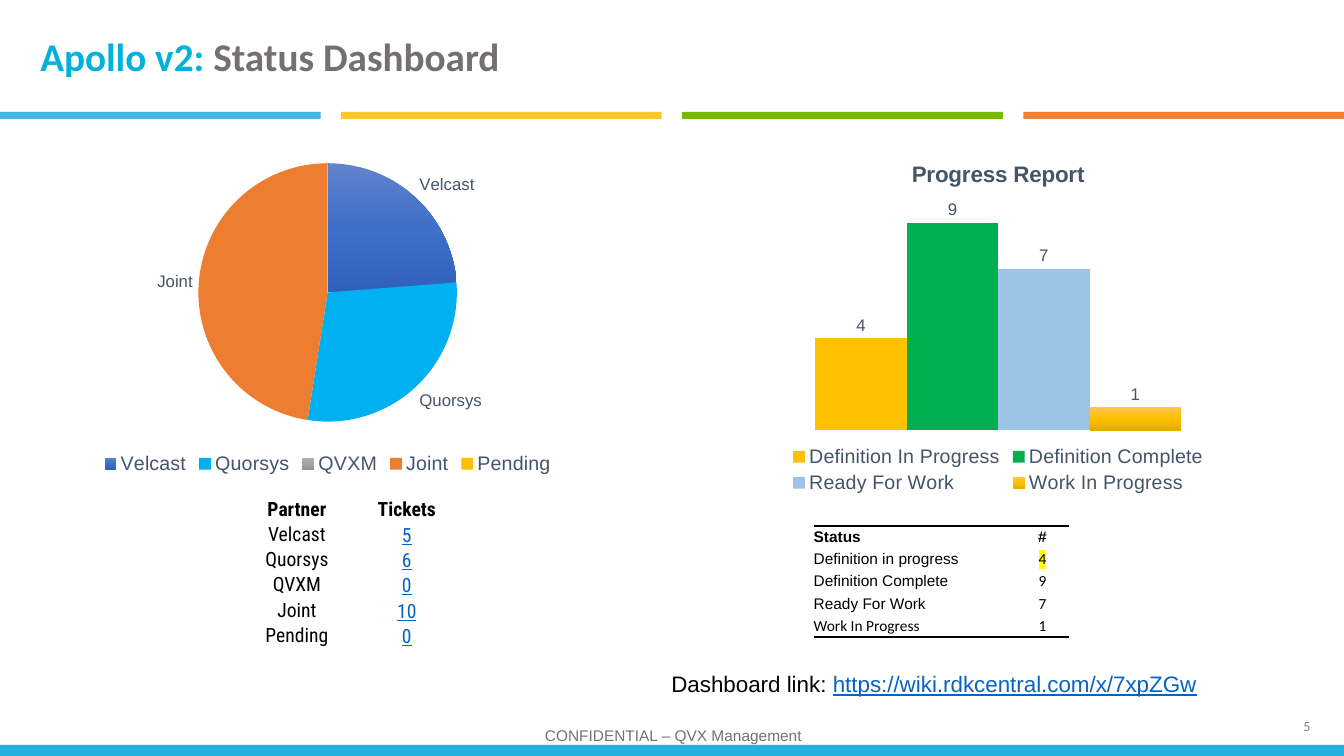
from copy import deepcopy

from lxml.etree import SubElement
from pptx import Presentation
from pptx.chart.data import CategoryChartData
from pptx.dml.color import RGBColor
from pptx.enum.chart import XL_CHART_TYPE as ChartType
from pptx.enum.chart import XL_LABEL_POSITION as LabelPosition
from pptx.enum.chart import XL_LEGEND_POSITION as LegendPosition
from pptx.enum.shapes import MSO_SHAPE as Shape
from pptx.enum.text import MSO_ANCHOR as Anchor
from pptx.enum.text import MSO_AUTO_SIZE as AutoSize
from pptx.enum.text import PP_ALIGN as Align
from pptx.oxml import parse_xml
from pptx.oxml.ns import nsdecls, qn
from pptx.util import Inches, Pt

SLIDE_W, SLIDE_H = 13.33, 7.5
STRIPE_W = 3.18
NO_STYLE = "{2D5ABB26-0587-4C30-8999-92F81FD0307C}"
COLORS = {
    "black": "000000", "white": "FFFFFF", "title": "00B2DB", "title_gray": "757070",
    "footer": "767171", "number": "808080", "bar": "22B2DB", "link": "0563C1",
    "highlight": "FFFF00", "chart_text": "44546A", "sky": "00B0F0",
    "orange": "ED7D31", "amber": "FFC000", "green": "00B050", "pale": "9DC3E6",
}
STRIPES = ["42B4E6", "FFC726", "76B900", "F27E32"]
BLUE_FADE = ["6183CB", "3E70CA", "3062BB"]
GRAY_FADE = ["AFAFAF", "A5A5A5", "939393"]
AMBER_FADE = ["FFC64B", "FFC000", "E3AB00"]

# Partner, tickets, share of the pie, slice fill
PARTNERS = [
    ("Velcast", 5, 24, BLUE_FADE),
    ("Quorsys", 6, 29, COLORS["sky"]),
    ("QVXM", 0, 0, GRAY_FADE),
    ("Joint", 10, 48, COLORS["orange"]),
    ("Pending", 0, 0, COLORS["amber"]),
]
# Table label, legend label, count, label font, column fill
STATUSES = [
    ("Definition in progress", "Definition In Progress", 4, "Arial", COLORS["amber"]),
    ("Definition Complete", "Definition Complete", 9, "Arial", COLORS["green"]),
    ("Ready For Work", "Ready For Work", 7, "Arial", COLORS["pale"]),
    ("Work In Progress", "Work In Progress", 1, "Calibri", AMBER_FADE),
]


def set_font(font, size, color, name="Arial", bold=False):
    font.size, font.name, font.bold = Pt(size), name, bold
    font.color.rgb = RGBColor.from_string(COLORS[color])


def add_span(para, text, size, color="black", name="Arial", bold=False,
             underline=False, highlight=None):
    span = para.add_run()
    span.text = text
    set_font(span.font, size, color, name, bold)
    if underline:
        span.font.underline = True
    if highlight:
        mark = parse_xml(f'<a:highlight {nsdecls("a")}>'
                         f'<a:srgbClr val="{COLORS[highlight]}"/></a:highlight>')
        span._r.rPr.find(qn("a:solidFill")).addnext(mark)


def add_box(page, left, top, width, height, wrap=False, anchor=Anchor.TOP):
    """Add a text box and return its first paragraph."""
    frame = page.shapes.add_textbox(
        Inches(left), Inches(top), Inches(width), Inches(height)).text_frame
    frame.word_wrap, frame.vertical_anchor = wrap, anchor
    return frame.paragraphs[0]


def add_bar(page, left, top, width, height, color):
    bar = page.shapes.add_shape(
        Shape.RECTANGLE, Inches(left), Inches(top), Inches(width), Inches(height))
    bar.shadow.inherit = False
    bar.fill.solid()
    bar.fill.fore_color.rgb = RGBColor.from_string(color)
    bar.line.fill.background()


def add_table(page, left, top, widths, row_height, row_count):
    frame = page.shapes.add_table(
        row_count, len(widths), Inches(left), Inches(top),
        Inches(sum(widths)), Inches(row_height * row_count))
    table = frame.table
    table.first_row = table.horz_banding = False
    table._tbl.tblPr.find(qn("a:tableStyleId")).text = NO_STYLE
    for column, width in zip(table.columns, widths):
        column.width = Inches(width)
    for row in table.rows:
        row.height = Inches(row_height)
    return table


def fill_cell(cell, text, inset=0, anchor=Anchor.MIDDLE, align=Align.CENTER, **style):
    cell.margin_left = cell.margin_right = cell.margin_top = Inches(inset)
    cell.margin_bottom = 0
    cell.vertical_anchor = anchor
    para = cell.text_frame.paragraphs[0]
    para.alignment = align
    add_span(para, text, **style)


def add_rule(cell, side):
    """Draw a black 2 pt border; side is T or B."""
    cell._tc.get_or_add_tcPr().insert(0, parse_xml(
        f'<a:ln{side} {nsdecls("a")} w="{Pt(2)}"><a:solidFill>'
        f'<a:srgbClr val="{COLORS["black"]}"/></a:solidFill></a:ln{side}>'))


def paint(fill, color):
    """Fill with one colour, or with a downward fade through three."""
    if isinstance(color, str):
        fill.solid()
        fill.fore_color.rgb = RGBColor.from_string(color)
        return
    fill.gradient()
    fill.gradient_angle = 270
    first = fill.gradient_stops[0]._gs
    first.addnext(deepcopy(first))
    for stop, shade, position in zip(fill.gradient_stops, color, (0, 0.5, 1)):
        stop.color.rgb = RGBColor.from_string(shade)
        stop.position = position


def add_chart(page, kind, data, left, top, width, height, plot_box):
    chart = page.shapes.add_chart(
        kind, Inches(left), Inches(top), Inches(width), Inches(height), data).chart
    set_font(chart.font, 10, "black")
    chart.has_title = False
    chart.has_legend = True
    chart.legend.position = LegendPosition.BOTTOM
    chart.legend.include_in_layout = False
    set_font(chart.legend.font, 14, "chart_text")
    area = chart._chartSpace.chart.plotArea
    for old in area.findall(qn("c:layout")):
        area.remove(old)
    layout = parse_xml(f'<c:layout {nsdecls("c")}><c:manualLayout/></c:layout>')
    settings = [("layoutTarget", "inner"), ("xMode", "edge"), ("yMode", "edge"),
                *zip("xywh", plot_box)]
    for tag, value in settings:
        SubElement(layout[0], qn(f"c:{tag}")).set("val", str(value))
    area.insert(0, layout)
    return chart


def add_partner_pie(page):
    data = CategoryChartData()
    data.categories = [name for name, *_ in PARTNERS]
    data.add_series("Series 1", [share for _, _, share, _ in PARTNERS])
    chart = add_chart(page, ChartType.PIE, data, 0.3, 1.42, 5.9, 3.33,
                      (0.28, 0.06, 0.44, 0.77))
    chart.plots[0].vary_by_categories = True
    series = chart.plots[0].series[0]
    labels = series.data_labels
    labels.show_category_name, labels.show_value = True, False
    labels.show_percentage = False
    labels.position = LabelPosition.OUTSIDE_END
    set_font(labels.font, 12, "chart_text")
    hidden = []
    for index, (_, _, share, color) in enumerate(PARTNERS):
        paint(series.points[index].format.fill, color)
        if not share:
            hidden.append(parse_xml(f'<c:dLbl {nsdecls("c")}><c:idx val="{index}"/>'
                                    '<c:delete val="1"/></c:dLbl>'))
    labels._element[0:0] = hidden


def add_progress_columns(page):
    data = CategoryChartData()
    data.categories = ["1"]
    for _, name, count, _, _ in STATUSES:
        data.add_series(name, [count])
    chart = add_chart(page, ChartType.COLUMN_CLUSTERED, data, 7.13, 1.42, 5.54, 3.52,
                      (0.05, 0.16, 0.9, 0.65))
    chart.has_title = True
    add_span(chart.chart_title.text_frame.paragraphs[0], "Progress Report", 16,
             "chart_text", bold=True)
    chart.category_axis.visible = chart.value_axis.visible = False
    chart.value_axis.has_major_gridlines = False
    chart.value_axis.minimum_scale, chart.value_axis.maximum_scale = 0, 10
    plot = chart.plots[0]
    plot.vary_by_categories, plot.gap_width, plot.overlap = False, 150, 0
    for series, status in zip(plot.series, STATUSES):
        paint(series.format.fill, status[-1])
        series.data_labels.show_value = True
        series.data_labels.position = LabelPosition.OUTSIDE_END
        set_font(series.data_labels.font, 12, "chart_text")


def add_status_table(page):
    rows = [("Status", "#", "Arial")]
    rows += [(label, str(count), font) for label, _, count, font, _ in STATUSES]
    table = add_table(page, 8.07, 5.22, [2.01, 0.52], 0.22, len(rows))
    for index, (label, count, font) in enumerate(rows):
        name_cell, count_cell = table.rows[index].cells
        head = index == 0
        fill_cell(name_cell, label, align=Align.LEFT, size=11, name=font, bold=head)
        fill_cell(count_cell, count, size=11, name="Arial" if head else "Calibri",
                  bold=head, highlight="highlight" if index == 1 else None)
        for cell in (name_cell, count_cell):
            paint(cell.fill, COLORS["white"])
            if head:
                add_rule(cell, "T")
            elif index == len(rows) - 1:
                add_rule(cell, "B")


def add_partner_table(page):
    rows = [("Partner", "Tickets")]
    rows += [(name, str(tickets)) for name, tickets, _, _ in PARTNERS]
    table = add_table(page, 2.4, 4.93, [1.09, 1.09], 0.25, len(rows))
    for index, texts in enumerate(rows):
        for column, text in enumerate(texts):
            cell = table.cell(index, column)
            link = index > 0 and column == 1
            fill_cell(cell, text, inset=0.01, anchor=Anchor.BOTTOM if link else Anchor.TOP,
                      size=14, name="Roboto Condensed", bold=index == 0,
                      color="link" if link else "black", underline=link)
            cell.fill.background()


def add_title(page):
    title = page.shapes.title
    title.left, title.top = Inches(0.3), Inches(0.07)
    title.width, title.height = Inches(12.52), Inches(0.96)
    title.text_frame.vertical_anchor = Anchor.MIDDLE
    title.text_frame.auto_size = AutoSize.NONE
    para = title.text_frame.paragraphs[0]
    para.alignment = Align.LEFT
    add_span(para, "Apollo v2: ", 28, "title", "Calibri", bold=True)
    add_span(para, "Status Dashboard", 28, "title_gray", "Calibri", bold=True)


def add_frame(page):
    """Add the stripes, the bottom bar, the footer and the page number."""
    add_bar(page, 0, 7.39, SLIDE_W, 0.11, COLORS["bar"])
    add_span(add_box(page, 12.83, 7.07, 0.37, 0.27), "5", 10, "number", "Calibri")
    footer = add_box(page, 4.46, 7.19, 4.44, 0.25, wrap=True, anchor=Anchor.MIDDLE)
    footer.alignment, footer.line_spacing = Align.CENTER, 0.8
    add_span(footer, "CONFIDENTIAL – QVX Management", 11, "footer")
    step = (SLIDE_W - STRIPE_W) / (len(STRIPES) - 1)
    for index, color in enumerate(STRIPES):
        add_bar(page, index * step, 1.11, STRIPE_W, 0.07, color)


def main():
    deck = Presentation()
    deck.slide_width, deck.slide_height = Inches(SLIDE_W), Inches(SLIDE_H)
    page = deck.slides.add_slide(deck.slide_layouts[5])
    add_frame(page)
    add_title(page)
    link = add_box(page, 6.56, 6.6, 5.54, 0.37)
    add_span(link, "Dashboard link: ", 16)
    add_span(link, "https://wiki.rdkcentral.com/x/7xpZGw", 16, "link", underline=True)
    add_status_table(page)
    add_partner_table(page)
    add_partner_pie(page)
    add_progress_columns(page)
    deck.save("out.pptx")


if __name__ == "__main__":
    main()
